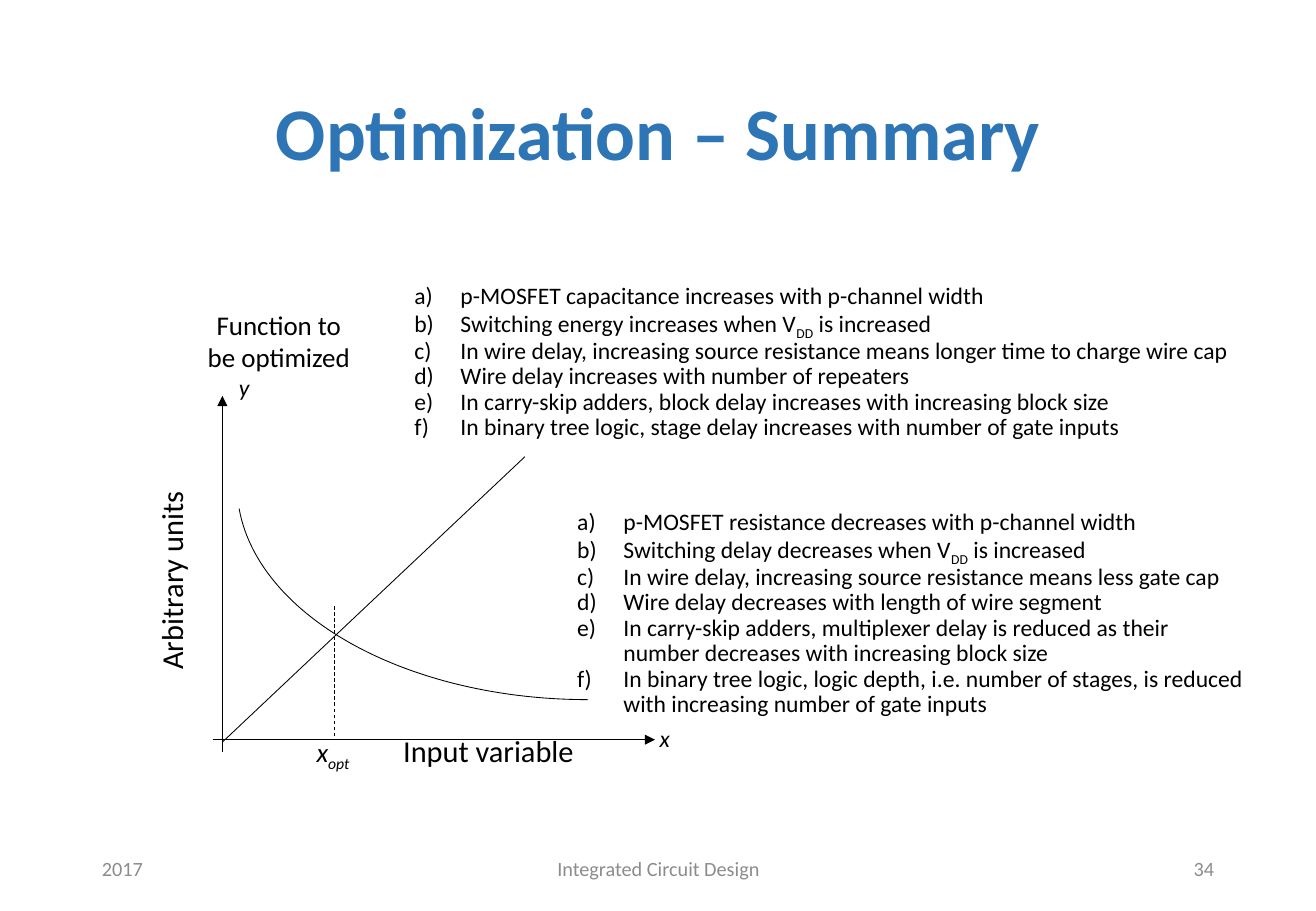
"""Build the optimization summary slide with its trade-off graph."""
from dataclasses import dataclass, field

from lxml import etree
from pptx import Presentation
from pptx import util as u
from pptx.dml.color import RGBColor
from pptx.enum import dml, shapes, text
from pptx.oxml import ns
from pptx.slide import Slide

BLACK = RGBColor(0x00, 0x00, 0x00)
GREY = RGBColor(0x8C, 0x8C, 0x8C)
BLUE = RGBColor(0x2E, 0x75, 0xB6)
LEFT, CENTER, RIGHT = text.PP_ALIGN.LEFT, text.PP_ALIGN.CENTER, text.PP_ALIGN.RIGHT
TOP, MIDDLE = text.MSO_ANCHOR.TOP, text.MSO_ANCHOR.MIDDLE
LIST_INDENT = u.Inches(0.38)
LINE_WIDTH = u.Pt(0.5)
SUBSCRIPT = "_"


@dataclass
class Label:
    """A text box; underscores in a line enclose a subscript."""
    box: tuple[float, float, float, float]
    lines: list[str]
    size: int
    align: text.PP_ALIGN = CENTER
    color: RGBColor = BLACK
    anchor: text.MSO_ANCHOR = TOP
    spacing: float | u.Length = u.Pt(16)
    inset: tuple[float, float] = (0, 0)
    rotation: int = 0
    lettered: bool = False
    font: dict[str, bool] = field(default_factory=dict)


@dataclass
class Line:
    """A straight line of the graph."""
    start: tuple[float, float]
    end: tuple[float, float]
    arrow: bool = False
    dashed: bool = False


def lettered_list(box: tuple[float, float, float, float], lines: list[str]) -> Label:
    """Describe a list numbered a), b), c)."""
    return Label(box, lines, 14, LEFT, spacing=0.9, lettered=True)


def footer(left: float, width: float, words: str, align: text.PP_ALIGN) -> Label:
    """Describe one part of the footer."""
    return Label((left, 6.95, width, 0.4), [words], 12, align, GREY, MIDDLE, 1.0, (0.1, 0.05))


LABELS = [
    footer(0.74, 2.44, "2017", LEFT),
    footer(3.59, 3.66, "Integrated Circuit Design", CENTER),
    footer(7.65, 2.44, "34", RIGHT),
    Label((0.7, 0.4, 9.44, 1.45), ["Optimization – Summary"], 44, CENTER, BLUE, MIDDLE, 0.9,
          (0.1, 0.05), font={"bold": True}),
    Label((1.36, 2.54, 1.87, 0.6), ["Function to", "be optimized"], 16, spacing=1.0),
    lettered_list((3.41, 2.34, 6.94, 1.28), [
        "p-MOSFET capacitance increases with p-channel width",
        "Switching energy increases when V_DD_ is increased",
        "In wire delay, increasing source resistance means longer time to charge wire cap",
        "Wire delay increases with number of repeaters",
        "In carry-skip adders, block delay increases with increasing block size",
        "In binary tree logic, stage delay increases with number of gate inputs",
    ]),
    lettered_list((4.75, 4.2, 5.49, 1.98), [
        "p-MOSFET resistance decreases with p-channel width",
        "Switching delay decreases when V_DD_ is increased",
        "In wire delay, increasing source resistance means less gate cap",
        "Wire delay decreases with length of wire segment",
        "In carry-skip adders, multiplexer delay is reduced as their number decreases "
        "with increasing block size",
        "In binary tree logic, logic depth, i.e. number of stages, is reduced "
        "with increasing number of gate inputs",
    ]),
    Label((5.27, 5.97, 0.4, 0.42), ["x"], 14, font={"italic": True}),
    Label((1.81, 3.08, 0.4, 0.42), ["y"], 14, font={"italic": True}),
    Label((2.54, 6.14, 0.4, 0.42), ["x_opt_"], 16, font={"italic": True}),
    Label((3, 6.11, 2.04, 0.43), ["Input variable"], 18),
    Label((0.53, 4.57, 2.03, 0.42), ["Arbitrary units"], 18, rotation=270),
]

LINES = [
    Line((1.83, 6.19), (1.83, 3.26), arrow=True),
    Line((1.75, 6.09), (5.39, 6.09), arrow=True),
    Line((1.83, 6.11), (4.32, 3.76)),
    Line((2.75, 6.06), (2.75, 4.99), dashed=True),
]


def set_all(target: object, values: dict[str, object]) -> None:
    """Set each named attribute of the target."""
    for name, value in values.items():
        setattr(target, name, value)


def add_label(slide: Slide, label: Label) -> None:
    """Draw a text box."""
    shape = slide.shapes.add_textbox(*map(u.Inches, label.box))
    shape.rotation = label.rotation
    frame = shape.text_frame
    side, edge = map(u.Inches, label.inset)
    set_all(frame, {"word_wrap": True, "vertical_anchor": label.anchor,
                    "margin_left": side, "margin_right": side,
                    "margin_top": edge, "margin_bottom": edge})
    for index, line in enumerate(label.lines):
        paragraph = frame.add_paragraph() if index else frame.paragraphs[0]
        set_all(paragraph, {"alignment": label.align, "line_spacing": label.spacing})
        if label.lettered:
            properties = paragraph._p.get_or_add_pPr()
            properties.set("marL", str(LIST_INDENT))
            properties.set("indent", str(-LIST_INDENT))
            etree.SubElement(properties, ns.qn("a:buAutoNum"), type="alphaLcParenR")
        for position, words in enumerate(line.split(SUBSCRIPT)):
            if not words:
                continue
            run = paragraph.add_run()
            run.text = words
            set_all(run.font, {"name": "Calibri", "size": u.Pt(label.size), **label.font})
            run.font.color.rgb = label.color
            if position % 2:
                run._r.get_or_add_rPr().set("baseline", "-25000")


def add_line(slide: Slide, line: Line) -> None:
    """Draw a straight line, with an arrowhead or dashes if asked."""
    connector = slide.shapes.add_connector(
        shapes.MSO_CONNECTOR.STRAIGHT, *map(u.Inches, line.start + line.end))
    connector.line.color.rgb = BLACK
    connector.line.width = LINE_WIDTH
    if line.dashed:
        connector.line.dash_style = dml.MSO_LINE.DASH
    if line.arrow:
        etree.SubElement(connector.line._get_or_add_ln(), ns.qn("a:tailEnd"), type="triangle")
    etree.SubElement(connector._element.spPr, ns.qn("a:effectLst"))


def add_decreasing_curve(slide: Slide) -> None:
    """Draw the falling curve as part of an ellipse."""
    box = map(u.Inches, (1.95, 2.23, 5.77, 3.53))
    arc = slide.shapes.add_shape(shapes.MSO_SHAPE.ARC, *box)
    arc.adjustments[0], arc.adjustments[1] = 162, 213.7
    arc.rotation = 180
    arc.shadow.inherit = False
    arc.fill.background()
    arc.line.color.rgb = BLACK
    arc.line.width = LINE_WIDTH


def main() -> None:
    """Build and save the presentation."""
    presentation = Presentation()
    set_all(presentation, {"slide_width": u.Inches(10.83), "slide_height": u.Inches(7.5)})
    slide = presentation.slides.add_slide(presentation.slide_layouts[6])
    for label in LABELS:
        add_label(slide, label)
    for line in LINES:
        add_line(slide, line)
    add_decreasing_curve(slide)
    presentation.save("out.pptx")


if __name__ == "__main__":
    main()
